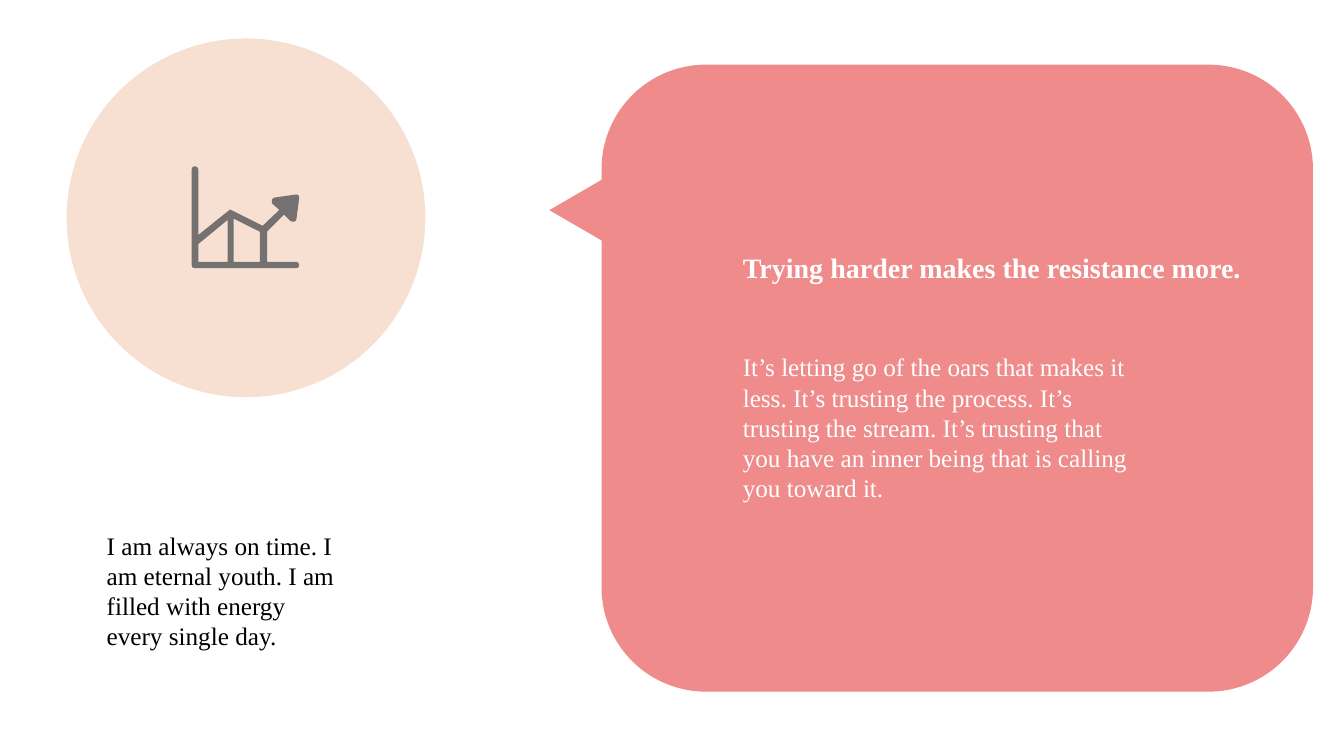
"""Builds a quote slide with a chart icon in a circle and a speech bubble."""
from pptx import Presentation
from pptx import util as u
from pptx.dml.color import RGBColor
from pptx.enum import shapes, text

COLORS = {"coral": "EF8B8B", "peach": "F7E0D1", "gray": "767171",
          "white": "FFFFFF", "black": "000000"}


def paint(sp, color):
    sp.fill.solid()
    sp.fill.fore_color.rgb = RGBColor.from_string(COLORS[color])
    sp.line.fill.background()
    sp.shadow.inherit = False


prs = Presentation()
prs.slide_width, prs.slide_height = u.Cm(33.87), u.Cm(19.05)
s = prs.slides.add_slide(prs.slide_layouts[6])

bubble = s.shapes.add_group_shape()
kinds = shapes.MSO_SHAPE
for parent, kind, box, color, angle in [
    (bubble, kinds.ISOSCELES_TRIANGLE, (13.72, 4.52, 1.8, 1.55), "coral", 270),
    (bubble, kinds.ROUNDED_RECTANGLE, (15.16, 1.63, 17.93, 15.8), "coral", 0),
    (s, kinds.OVAL, (1.68, 0.97, 9.04, 9.04), "peach", 0),
]:
    sp = parent.shapes.add_shape(kind, *map(u.Cm, box))
    sp.rotation = angle
    paint(sp, color)

outline = [
    (491, 419), (485, 421), (483, 427), (483, 668), (485, 674), (491, 676),
    (747, 676), (752, 674), (754, 668), (752, 662), (747, 660), (673, 660),
    (673, 584), (716, 541), (732, 557), (739, 559), (745, 557), (747, 553),
    (754, 500), (753, 493), (747, 490), (691, 498), (685, 503), (686, 513),
    (704, 529), (662, 569), (584, 530), (580, 528), (576, 531), (500, 592),
    (500, 427), (497, 421),
]
left_bar = [(574, 554), (574, 660), (500, 660), (500, 615)]
right_bar = [(589, 551), (655, 584), (655, 660), (589, 660)]
fb = s.shapes.build_freeform(*outline[0], scale=u.Cm(1) / 100)
fb.add_line_segments(outline[1:])
for bar in (left_bar, right_bar):
    fb.move_to(*bar[0])
    fb.add_line_segments(bar[1:])
paint(fb.convert_to_shape(), "gray")

for words, box, size, color, bold, wrap in [
    ("It’s letting go of the oars that makes it less. It’s trusting the process. "
     "It’s trusting the stream. It’s trusting that you have an inner being that "
     "is calling you toward it.", (18.47, 8.74, 10.39, 4.11), 18, "white", False, True),
    ("Trying harder makes the resistance more.",
     (18.47, 6.2, 14.81, 1.12), 20, "white", True, False),
    ("I am always on time. I am eternal youth. I am filled with energy "
     "every single day.", (2.44, 13.23, 6.55, 3.33), 18, "black", False, True),
]:
    tf = s.shapes.add_textbox(*map(u.Cm, box)).text_frame
    tf.word_wrap = wrap
    tf.auto_size = text.MSO_AUTO_SIZE.SHAPE_TO_FIT_TEXT
    p = tf.paragraphs[0]
    p.text = words
    p.font.name = "Times New Roman"
    p.font.size = u.Pt(size)
    p.font.bold = bold
    p.font.color.rgb = RGBColor.from_string(COLORS[color])

prs.save("out.pptx")
